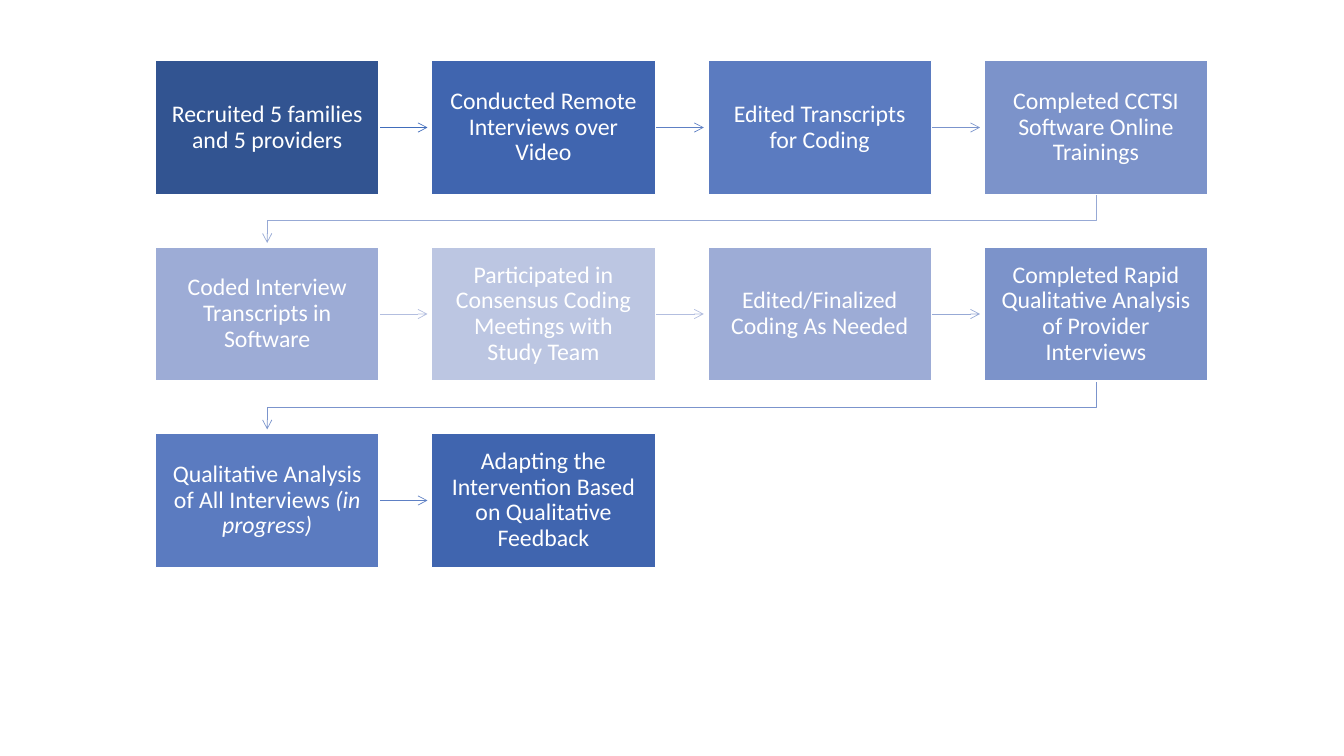
from dataclasses import dataclass

import pptx
import pptx.dml.color
import pptx.enum.shapes
import pptx.enum.text
import pptx.oxml
import pptx.oxml.ns
import pptx.util

Inches = pptx.util.Inches
Pt = pptx.util.Pt

COLUMNS = 4
LEFT, TOP = 1.54, 0.6
BOX_W, BOX_H = 2.22, 1.33
STEP_X, STEP_Y = 2.74, 1.85
TIP_GAP = 0.04  # space between an arrow tip and the next box
MARGINS = dict.fromkeys(
    ("margin_left", "margin_right", "margin_top", "margin_bottom"), Inches(0.13))
FRAME = {"word_wrap": True, "vertical_anchor": pptx.enum.text.MSO_ANCHOR.MIDDLE, **MARGINS}
PARAGRAPH = {"alignment": pptx.enum.text.PP_ALIGN.CENTER, "line_spacing": 0.9}
FONT = {"name": "Calibri", "size": Pt(17)}


@dataclass
class Step:
    text: str
    fill: str
    arrow: str = ""  # colour of the arrow to the next step
    italic: str = ""


STEPS = [
    Step("Recruited 5 families and 5 providers", "325491", "416DBB"),
    Step("Conducted Remote Interviews over Video", "4065AF", "5E80C4"),
    Step("Edited Transcripts for Coding", "5B7BC0", "7B94CC"),
    Step("Completed CCTSI Software Online Trainings", "7C93CA", "97A9D5"),
    Step("Coded Interview Transcripts in Software", "9DACD6", "B3BEDF"),
    Step("Participated in Consensus Coding Meetings with Study Team", "BCC6E2", "B3BEDF"),
    Step("Edited/Finalized Coding As Needed", "9DACD6", "97A9D5"),
    Step("Completed Rapid Qualitative Analysis of Provider Interviews", "7C93CA", "7B94CC"),
    Step("Qualitative Analysis of All Interviews ", "5B7BC0", "5E80C4", "(in progress)"),
    Step("Adapting the Intervention Based on Qualitative Feedback", "4065AF"),
]


def rgb(value: str) -> pptx.dml.color.RGBColor:
    return pptx.dml.color.RGBColor.from_string(value)


def set_all(target, values: dict) -> None:
    for name, value in values.items():
        setattr(target, name, value)


def corner(index: int) -> tuple[float, float]:
    """Left and top of a step's box, filling the grid row by row."""
    row, col = divmod(index, COLUMNS)
    return LEFT + col * STEP_X, TOP + row * STEP_Y


def style_arrow(sp, color: str) -> None:
    sp.line.color.rgb = rgb(color)
    sp.line.width = Pt(0.5)
    ns = pptx.oxml.ns.nsdecls("a")
    sp.line._get_or_add_ln().append(pptx.oxml.parse_xml(f'<a:tailEnd {ns} type="arrow"/>'))


def add_side_arrow(shapes, x: float, y: float, color: str) -> None:
    mid = y + BOX_H / 2
    sp = shapes.add_connector(
        pptx.enum.shapes.MSO_CONNECTOR.STRAIGHT,
        Inches(x + BOX_W), Inches(mid), Inches(x + STEP_X - TIP_GAP), Inches(mid))
    style_arrow(sp, color)
    ns = pptx.oxml.ns.nsdecls("a")
    sp._element.spPr.append(pptx.oxml.parse_xml(f"<a:effectLst {ns}/>"))


def add_return_arrow(shapes, x: float, y: float, color: str) -> None:
    """Bent arrow from the last box of a row to the first box of the next."""
    start, end = x + BOX_W / 2, LEFT + BOX_W / 2
    bottom, next_top = y + BOX_H, y + STEP_Y
    turn = (bottom + next_top) / 2
    builder = shapes.build_freeform(Inches(start), Inches(bottom))
    bends = [(start, turn), (end, turn), (end, next_top - TIP_GAP)]
    builder.add_line_segments([(Inches(a), Inches(b)) for a, b in bends], close=False)
    sp = builder.convert_to_shape()
    sp.shadow.inherit = False
    sp.fill.background()
    style_arrow(sp, color)


def add_box(shapes, step: Step, x: float, y: float) -> None:
    sp = shapes.add_shape(
        pptx.enum.shapes.MSO_SHAPE.RECTANGLE,
        Inches(x), Inches(y), Inches(BOX_W), Inches(BOX_H))
    sp.shadow.inherit = False
    sp.fill.solid()
    sp.fill.fore_color.rgb = rgb(step.fill)
    sp.line.color.rgb = rgb("FFFFFF")
    sp.line.width = Pt(1)
    tf = sp.text_frame
    set_all(tf, FRAME)
    p = tf.paragraphs[0]
    set_all(p, PARAGRAPH)
    for text, italic in ((step.text, None), (step.italic, True)):
        if text:
            r = p.add_run()
            r.text = text
            set_all(r.font, {**FONT, "italic": italic})
            r.font.color.rgb = rgb("FFFFFF")


def main() -> None:
    prs = pptx.Presentation()
    prs.slide_width, prs.slide_height = Inches(13.33), Inches(7.5)
    shapes = prs.slides.add_slide(prs.slide_layouts[6]).shapes
    for index, step in enumerate(STEPS):
        x, y = corner(index)
        if step.arrow:
            ends_row = index % COLUMNS == COLUMNS - 1
            add_arrow = add_return_arrow if ends_row else add_side_arrow
            add_arrow(shapes, x, y, step.arrow)
        add_box(shapes, step, x, y)
    prs.save("out.pptx")


if __name__ == "__main__":
    main()
